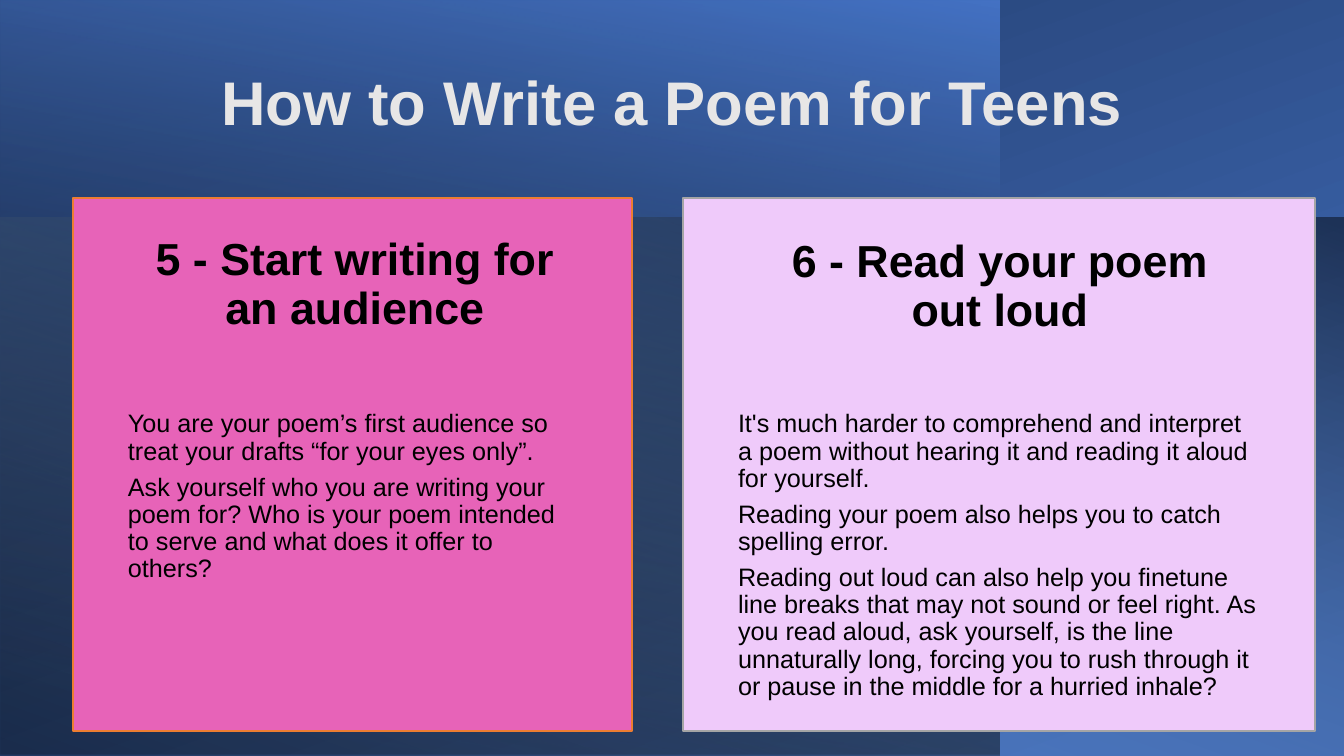
from lxml.etree import SubElement
from pptx import Presentation
from pptx.dml.color import RGBColor
from pptx.enum.shapes import MSO_SHAPE
from pptx.enum.text import MSO_ANCHOR, PP_ALIGN
from pptx.oxml.ns import qn
from pptx.util import Emu, Pt

COLORS = {
    "blue": "4472C4", "navy": "203864", "sky": "9DC3E6", "black": "000000",
    "title": "E7E6E6", "pink": "E763B8", "orange": "ED7D31",
    "lilac": "EFCAFA", "gray": "A5A5A5",
}
FONT = "Arial"
TITLE = "How to Write a Poem for Teens"

# Box before rotation, rotation, mirrored, gradient angle, stops (position %, color, opacity %)
BACKDROPS = [
    ((294, -294, 756, 1344), 270, True, 200, [(8, "blue", 100), (100, "navy", 100)]),
    ((0, 0, 1000, 756), 180, True, 80, [(8, "black", 52), (100, "blue", 100)]),
    ((402, -185, 539, 1345), 270, False, 20, [(0, "sky", 0), (100, "black", 46)]),
]

CARDS = [
    {
        "left": 73, "width": 559, "fill": "pink", "line": "orange",
        "heading": "5 - Start writing for an audience",
        "heading_left": 73, "heading_top": 237,
        "body": [
            "You are your poem’s first audience so treat your drafts “for your eyes only”.",
            "Ask yourself who you are writing your poem for? Who is your poem intended "
            "to serve and what does it offer to others?",
        ],
    },
    {
        "left": 683, "width": 632, "fill": "lilac", "line": "gray",
        "heading": "6 - Read your poem out loud",
        "heading_left": 718, "heading_top": 239,
        "body": [
            "It's much harder to comprehend and interpret a poem without hearing it "
            "and reading it aloud for yourself.",
            "Reading your poem also helps you to catch spelling error.",
            "Reading out loud can also help you finetune line breaks that may not sound "
            "or feel right. As you read aloud, ask yourself, is the line unnaturally long, "
            "forcing you to rush through it or pause in the middle for a hurried inhale?",
        ],
    },
]
CARD_TOP, CARD_HEIGHT = 198, 533
BODY_TOP, BODY_HEIGHT = 411, 320
HEADING_WIDTH, HEADING_HEIGHT = 564, 96
SIDE_INSET = 55
EMU_PER_PX = 914400 / 100.8


def px(length):
    return Emu(round(length * EMU_PER_PX))


def color(name):
    return RGBColor.from_string(COLORS[name])


def add_rectangle(slide, box):
    shape = slide.shapes.add_shape(MSO_SHAPE.RECTANGLE, *map(px, box))
    shape.shadow.inherit = False
    return shape


def fill_gradient(shape, angle, stops):
    """Fill with a linear gradient whose stops may be see-through."""
    shape.fill.gradient()
    gradient = shape.element.spPr.find(qn("a:gradFill"))
    gradient.attrib.clear()
    for child in list(gradient):
        gradient.remove(child)
    stop_list = SubElement(gradient, qn("a:gsLst"))
    for position, name, opacity in stops:
        stop = SubElement(stop_list, qn("a:gs"), pos=str(position * 1000))
        stop_color = SubElement(stop, qn("a:srgbClr"), val=COLORS[name])
        if opacity < 100:
            SubElement(stop_color, qn("a:alpha"), val=str(opacity * 1000))
    SubElement(gradient, qn("a:lin"), ang=str(angle * 60000), scaled="0")


def add_backdrop(slide, box, rotation, mirrored, angle, stops):
    shape = add_rectangle(slide, box)
    shape.rotation = rotation
    if mirrored:
        shape.element.spPr.find(qn("a:xfrm")).set("flipH", "1")
    shape.line.fill.background()
    fill_gradient(shape, angle, stops)


def add_text(slide, box, texts, size, name="black", bold=False, inset=SIDE_INSET,
             align=PP_ALIGN.LEFT, anchor=MSO_ANCHOR.TOP, space_after=0):
    frame = slide.shapes.add_textbox(*map(px, box)).text_frame
    frame.word_wrap = True
    frame.vertical_anchor = anchor
    frame.margin_left = frame.margin_right = px(inset)
    frame.margin_top = frame.margin_bottom = 0
    for index, text in enumerate(texts):
        paragraph = frame.add_paragraph() if index else frame.paragraphs[0]
        paragraph.alignment = align
        paragraph.line_spacing = 0.9
        paragraph.space_after = Pt(space_after)
        run = paragraph.add_run()
        run.text = text
        run.font.name = FONT
        run.font.size = Pt(size)
        run.font.bold = bold
        run.font.color.rgb = color(name)


def add_card(slide, card):
    left, width = card["left"], card["width"]
    panel = add_rectangle(slide, (left, CARD_TOP, width, CARD_HEIGHT))
    panel.fill.solid()
    panel.fill.fore_color.rgb = color(card["fill"])
    panel.line.color.rgb = color(card["line"])
    panel.line.width = Pt(1)
    add_text(slide, (left, BODY_TOP, width, BODY_HEIGHT), card["body"], 18, space_after=6.3)
    heading_box = (card["heading_left"], card["heading_top"], HEADING_WIDTH, HEADING_HEIGHT)
    add_text(slide, heading_box, [card["heading"]], 32, bold=True, align=PP_ALIGN.CENTER)


def main():
    presentation = Presentation()
    presentation.slide_width, presentation.slide_height = px(1344), px(756)
    slide = presentation.slides.add_slide(presentation.slide_layouts[6])
    for backdrop in BACKDROPS:
        add_backdrop(slide, *backdrop)
    add_text(slide, (93, 50, 1159, 111), [TITLE], 44, "title", bold=True, inset=10,
             align=PP_ALIGN.CENTER, anchor=MSO_ANCHOR.MIDDLE)
    for card in CARDS:
        add_card(slide, card)
    presentation.save("out.pptx")


if __name__ == "__main__":
    main()
